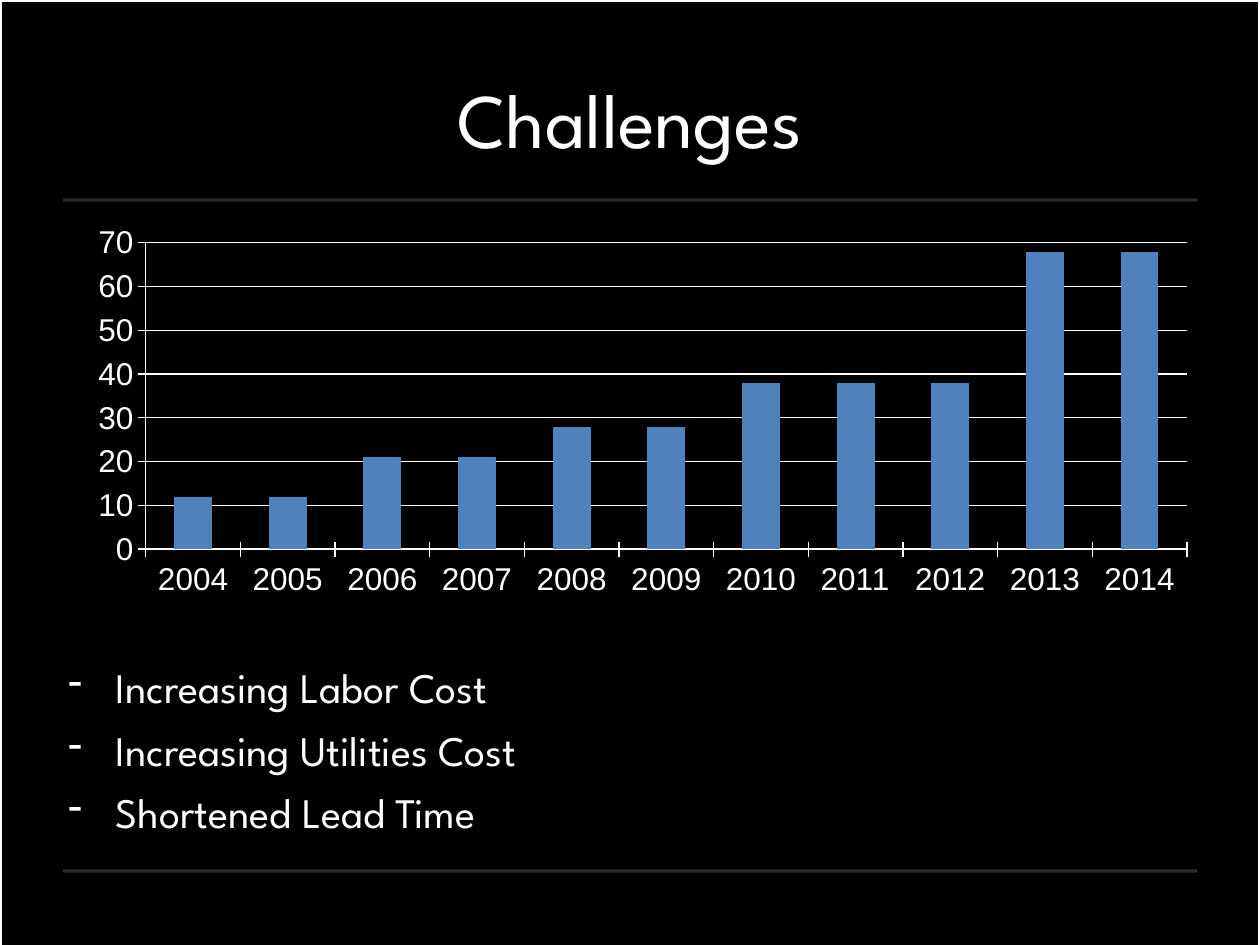
import pptx
import pptx.chart.data
import pptx.dml.color
import pptx.enum.chart
import pptx.enum.text
import pptx.enum.shapes
import pptx.oxml
import pptx.oxml.ns
import pptx.util
from dataclasses import dataclass

Inches, Pt = pptx.util.Inches, pptx.util.Pt
W, H = 10, 7.5


@dataclass(frozen=True)
class Theme:
    back: str = "000000"
    ink: str = "FFFFFF"
    bar: str = "4F81BD"
    shade: str = "808080"
    text_font: str = "League Spartan"
    chart_font: str = "Arial"
    title_size: int = 44
    body_size: int = 24
    chart_size: int = 18


THEME = Theme()
YEARS = [str(y) for y in range(2004, 2015)]
VALUES = [12, 12, 21, 21, 28, 28, 38, 38, 38, 68, 68]
BULLETS = ["Increasing Labor Cost", "Increasing Utilities Cost", "Shortened Lead Time"]


def rgb(value):
    return pptx.dml.color.RGBColor.from_string(value)


def share(x, y, w, h):
    """Turn shares of the slide's size into lengths."""
    return Inches(x * W), Inches(y * H), Inches(w * W), Inches(h * H)


def add_xml(parent, tag, inner="", attrs=""):
    ns = pptx.oxml.ns.nsdecls("a")
    el = pptx.oxml.parse_xml(f"<a:{tag} {ns} {attrs}>{inner}</a:{tag}>")
    parent.append(el)


def add_frame(s):
    builder = s.shapes.build_freeform(0, 0, scale=Inches(1))
    builder.add_line_segments([(W, 0), (W, H), (0, H)], close=True)
    sp = builder.convert_to_shape()
    sp.shadow.inherit = False
    sp.fill.background()
    sp.line.color.rgb = rgb(THEME.ink)
    sp.line.width = Pt(2.25)


def add_panel(s, box):
    """Black panel whose soft shadow shows as a rule below it."""
    sp = s.shapes.add_shape(pptx.enum.shapes.MSO_SHAPE.RECTANGLE, *share(*box))
    sp.fill.solid()
    sp.fill.fore_color.rgb = rgb(THEME.back)
    sp.line.fill.background()
    color = f'<a:srgbClr val="{THEME.shade}"><a:alpha val="35000"/></a:srgbClr>'
    shadow = (f'<a:outerShdw blurRad="0" dist="{Pt(1.8)}" dir="5400000" '
              f'rotWithShape="0">{color}</a:outerShdw>')
    add_xml(sp._element.spPr, "effectLst", shadow)
    tf = sp.text_frame
    tf.word_wrap = True
    tf.margin_left = tf.margin_right = tf.margin_top = tf.margin_bottom = Inches(0.04)
    return tf


def add_run(p, text, size):
    r = p.add_run()
    r.text = text
    r.font.name = THEME.text_font
    r.font.size = Pt(size)
    r.font.color.rgb = rgb(THEME.ink)


def add_title(s, text, box):
    tf = add_panel(s, box)
    tf.vertical_anchor = pptx.enum.text.MSO_ANCHOR.MIDDLE
    p = tf.paragraphs[0]
    p.alignment = pptx.enum.text.PP_ALIGN.CENTER
    add_run(p, text, THEME.title_size)


def add_bullets(s, items, box, text_top):
    tf = add_panel(s, box)
    tf.vertical_anchor = pptx.enum.text.MSO_ANCHOR.TOP
    tf.margin_top = Inches(text_top * H)
    for i, item in enumerate(items):
        p = tf.add_paragraph() if i else tf.paragraphs[0]
        p.alignment = pptx.enum.text.PP_ALIGN.LEFT
        p.space_before = Pt(7)
        pPr = p._p.get_or_add_pPr()
        pPr.set("marL", str(Inches(0.38)))
        pPr.set("indent", str(-Inches(0.38)))
        add_xml(pPr, "buChar", attrs='char="-"')
        add_run(p, item, THEME.body_size)


def style_axis(axis):
    axis.major_tick_mark = pptx.enum.chart.XL_TICK_MARK.CROSS
    axis.minor_tick_mark = pptx.enum.chart.XL_TICK_MARK.NONE
    axis.format.line.color.rgb = rgb(THEME.ink)


def add_columns(s, cats, vals, box):
    data = pptx.chart.data.CategoryChartData()
    data.categories = cats
    data.add_series("Series 1", vals)
    kind = pptx.enum.chart.XL_CHART_TYPE.COLUMN_CLUSTERED
    chart = s.shapes.add_chart(kind, *share(*box), data).chart
    chart.has_legend = chart.has_title = False
    chart.font.name = THEME.chart_font
    chart.font.size = Pt(THEME.chart_size)
    chart.font.color.rgb = rgb(THEME.ink)
    # Columns
    plot = chart.plots[0]
    plot.gap_width = 150
    plot.vary_by_categories = False
    fill = plot.series[0].format.fill
    fill.solid()
    fill.fore_color.rgb = rgb(THEME.bar)
    # Axes and gridlines
    axis = chart.value_axis
    for each in (chart.category_axis, axis):
        style_axis(each)
    axis.minimum_scale, axis.maximum_scale, axis.major_unit = 0, 70, 10
    axis.tick_labels.number_format = r"#,##0;\-#,##0"
    axis.tick_labels.number_format_is_linked = False
    axis.major_gridlines.format.line.color.rgb = rgb(THEME.ink)


def main():
    prs = pptx.Presentation()
    prs.slide_width, prs.slide_height = Inches(W), Inches(H)
    s = prs.slides.add_slide(prs.slide_layouts[6])
    s.background.fill.solid()
    s.background.fill.fore_color.rgb = rgb(THEME.back)
    add_frame(s)
    add_title(s, "Challenges", (0.05, 0.04, 0.9, 0.17))
    add_bullets(s, BULLETS, (0.05, 0.22, 0.9, 0.7), text_top=0.48)
    add_columns(s, YEARS, VALUES, (0.06, 0.23, 0.9, 0.41))
    prs.save("out.pptx")


if __name__ == "__main__":
    main()
